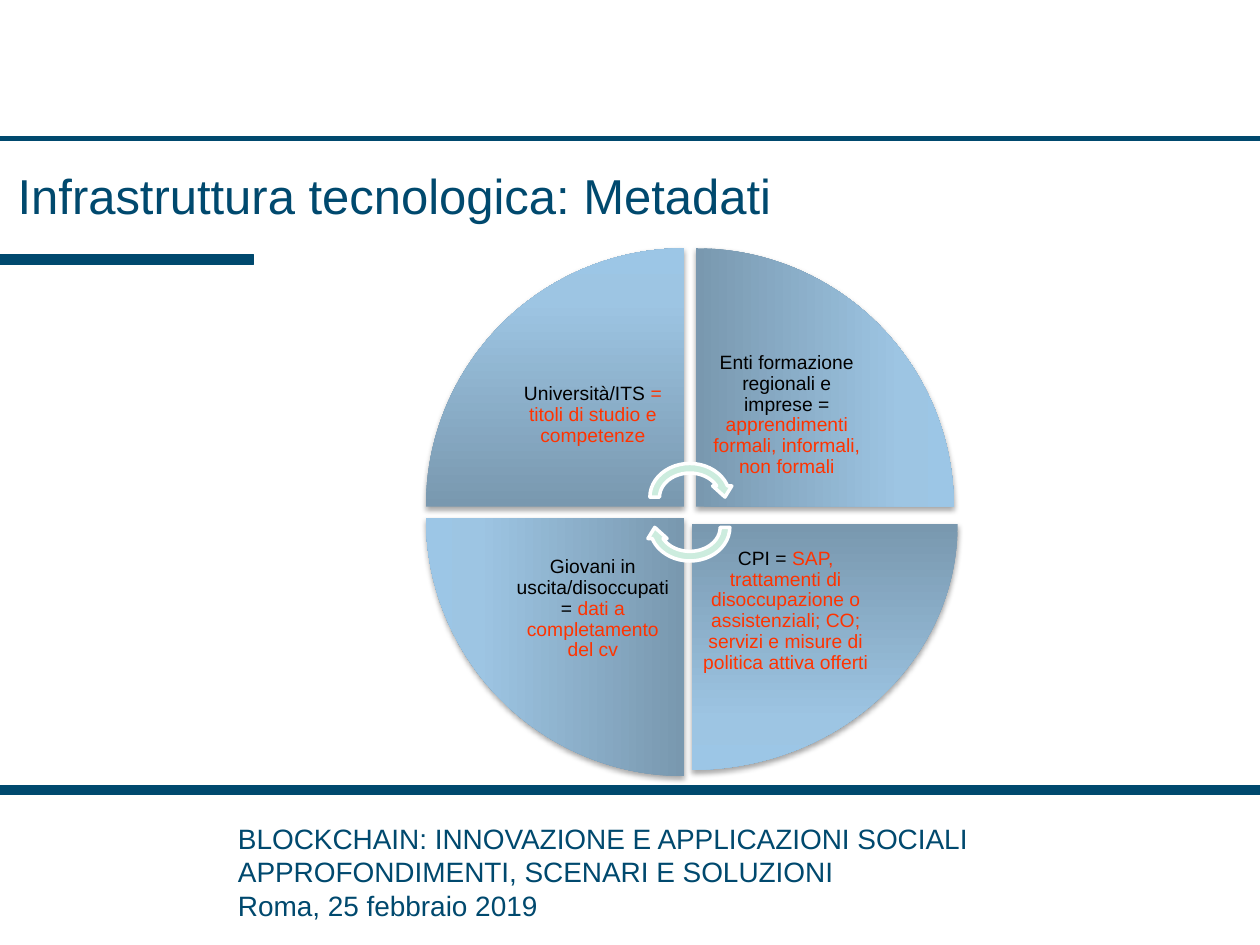
from lxml.etree import SubElement
from pptx import Presentation
from pptx.dml.color import RGBColor
from pptx.enum.shapes import MSO_CONNECTOR, MSO_SHAPE
from pptx.enum.text import MSO_ANCHOR, PP_ALIGN
from pptx.oxml import parse_xml
from pptx.oxml.ns import nsdecls, qn
from pptx.util import Inches, Pt

COLORS = {
    "navy": "00496E", "black": "000000", "red": "FF3300",
    "mint": "CCECDE", "white": "FFFFFF",
}
WEDGE_STOPS = [(0, "7998AF"), (80, "9DC5E3"), (100, "9CC6E6")]

TITLE = "Infrastruttura tecnologica: Metadati"
FOOTER = [
    "BLOCKCHAIN: INNOVAZIONE E APPLICAZIONI SOCIALI",
    "APPROFONDIMENTI, SCENARI E SOLUZIONI",
    "Roma, 25 febbraio 2019",
]
RULES = [(1.1, 3), (6.27, 6)]  # height on the page, line width

# source, its metadata, wedge (left, top, width, height), rotation
WEDGES = [
    ("Università/ITS ", "= titoli di studio e competenze",
     (3.38, 1.97, 2.05, 2.05), 0),
    ("Enti formazione regionali e imprese = ",
     "apprendimenti formali, informali, non formali",
     (5.52, 1.97, 2.05, 2.05), 90),
    ("CPI = ",
     "SAP, trattamenti di disoccupazione o assistenziali; CO; "
     "servizi e misure di politica attiva offerti",
     (5.49, 4.16, 2.11, 1.95), 180),
    ("Giovani in uscita/disoccupati = ", "dati a completamento del cv",
     (3.38, 4.11, 2.05, 2.05), 270),
]
LABEL_SHARE = 0.707  # label side as a share of the wedge side
ARROWS = [(3.64, 0), (3.88, 180)]  # top, rotation


def color(name):
    return RGBColor.from_string(COLORS[name])


def style(font, size, name):
    font.name, font.size = "Arial", Pt(size)
    font.color.rgb = color(name)


def add_rule(page, top, width):
    rule = page.shapes.add_connector(
        MSO_CONNECTOR.STRAIGHT, 0, Inches(top), Inches(10), Inches(top))
    rule.line.color.rgb = color("navy")
    rule.line.width = Pt(width)
    SubElement(rule._element.spPr, qn("a:effectLst"))


def add_shape(page, kind, place, fill, line, width):
    shape = page.shapes.add_shape(kind, *map(Inches, place))
    shape.shadow.inherit = False
    shape.fill.solid()
    shape.fill.fore_color.rgb = color(fill)
    shape.line.color.rgb = color(line)
    shape.line.width = Pt(width)
    return shape


def add_wedge(page, place, rotation):
    """Add a quarter of the circle with its gradient and soft shadow."""
    wedge = page.shapes.add_shape(MSO_SHAPE.PIE_WEDGE, *map(Inches, place))
    wedge.rotation = rotation
    wedge.line.fill.background()
    wedge.fill.gradient()
    gradient = wedge._element.spPr.find(qn("a:gradFill"))
    stops = "".join(
        f'<a:gs pos="{position * 1000}"><a:srgbClr val="{value}"/></a:gs>'
        for position, value in WEDGE_STOPS)
    gradient.getparent().replace(gradient, parse_xml(
        f'<a:gradFill {nsdecls("a")} rotWithShape="1"><a:gsLst>{stops}</a:gsLst>'
        '<a:lin ang="16200000" scaled="0"/></a:gradFill>'))
    wedge._element.spPr.append(parse_xml(
        f'<a:effectLst {nsdecls("a")}><a:outerShdw blurRad="{Pt(3.1)}" '
        f'dist="{Pt(1.8)}" dir="5400000" rotWithShape="0">'
        '<a:srgbClr val="000000"><a:alpha val="35000"/></a:srgbClr>'
        '</a:outerShdw></a:effectLst>'))


def add_label(page, source, metadata, place, rotation):
    """Add the label in the wedge corner nearest the circle's centre."""
    left, top, width, height = place
    label_width, label_height = width * LABEL_SHARE, height * LABEL_SHARE
    if rotation in (0, 270):
        left += width - label_width
    if rotation in (0, 90):
        top += height - label_height
    box = page.shapes.add_textbox(
        *map(Inches, (left, top, label_width, label_height)))
    frame = box.text_frame
    frame.word_wrap = True
    frame.vertical_anchor = MSO_ANCHOR.MIDDLE
    frame.margin_left = frame.margin_right = Inches(0.09)
    frame.margin_top = frame.margin_bottom = Inches(0.09)
    paragraph = frame.paragraphs[0]
    paragraph.alignment = PP_ALIGN.CENTER
    paragraph.line_spacing = 0.9
    for text, name in ((source, "black"), (metadata, "red")):
        span = paragraph.add_run()
        span.text = text
        style(span.font, 11, name)


def add_footer(page):
    box = page.shapes.add_textbox(*map(Inches, (1.79, 6.47, 6.61, 0.91)))
    box.text_frame.word_wrap = True
    box.text_frame.text = "\n".join(FOOTER)
    for paragraph in box.text_frame.paragraphs:
        paragraph.alignment = PP_ALIGN.JUSTIFY
        style(paragraph.runs[0].font, 16, "navy")


def add_title(page):
    title = page.shapes.title
    title.left, title.top, title.width, title.height = map(
        Inches, (0.04, 1.23, 9.92, 0.63))
    title.text_frame.text = TITLE
    title.text_frame.vertical_anchor = MSO_ANCHOR.MIDDLE
    paragraph = title.text_frame.paragraphs[0]
    paragraph.alignment = PP_ALIGN.LEFT
    style(paragraph.runs[0].font, 28, "navy")


def main():
    deck = Presentation()
    deck.slide_width, deck.slide_height = Inches(10), Inches(7.5)
    page = deck.slides.add_slide(deck.slide_layouts[5])
    for top, width in RULES:
        add_rule(page, top, width)
    add_shape(page, MSO_SHAPE.RECTANGLE, (0, 2.02, 2.01, 0.08),
              "navy", "navy", 0.75)
    add_footer(page)
    add_title(page)
    for source, metadata, place, rotation in WEDGES:
        add_wedge(page, place, rotation)
        add_label(page, source, metadata, place, rotation)
    for top, rotation in ARROWS:
        arrow = add_shape(page, MSO_SHAPE.CIRCULAR_ARROW,
                          (5.12, top, 0.71, 0.61), "mint", "white", 2)
        arrow.rotation = rotation
    deck.save("out.pptx")


if __name__ == "__main__":
    main()
